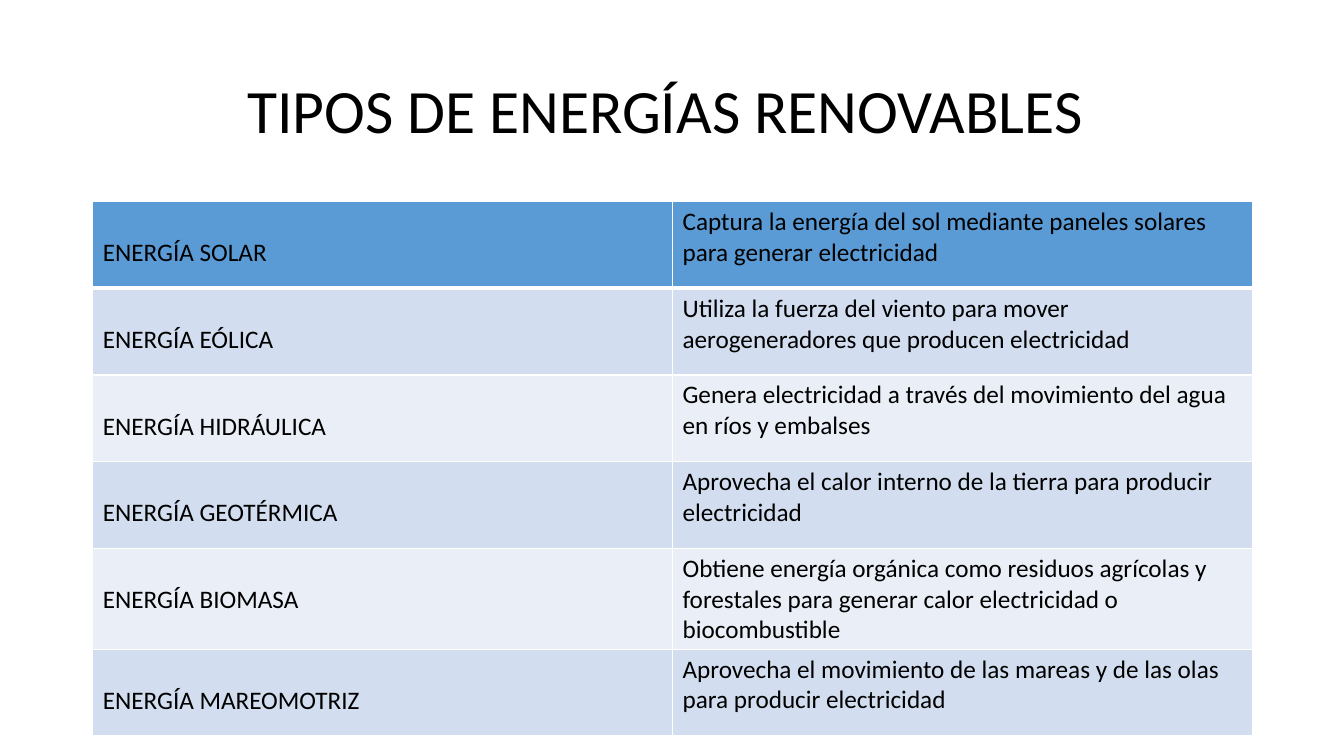
"""Build a slide with a table of renewable energy types."""
import pptx
import pptx.util
import pptx.dml.color
import pptx.enum.text
import pptx.oxml
import pptx.oxml.ns
from pptx.util import Inches

TITLE = "TIPOS DE ENERGÍAS RENOVABLES "
ENERGIES = [
    ("ENERGÍA SOLAR", "Captura la energía del sol mediante paneles solares para generar electricidad"),
    ("ENERGÍA EÓLICA", "Utiliza la fuerza del viento para mover aerogeneradores que producen electricidad"),
    ("ENERGÍA HIDRÁULICA", "Genera electricidad a través del movimiento del agua en ríos y embalses"),
    ("ENERGÍA GEOTÉRMICA", "Aprovecha el calor interno de la tierra para producir electricidad"),
    ("ENERGÍA BIOMASA", "Obtiene energía orgánica como residuos agrícolas y forestales para generar "
                        "calor electricidad o biocombustible"),
    ("ENERGÍA MAREOMOTRIZ", "Aprovecha el movimiento de las mareas y de las olas para producir electricidad"),
]
THEME = {
    "font": "Calibri", "text": "000000", "title_size": 44, "body_size": 18,
    "header": "5B9BD5", "bands": ("EAEFF7", "D2DEEF"),
    "border": "FFFFFF", "thin": 1, "thick": 3,
}
LEFT, WIDTH = 0.92, 11.5
TITLE_TOP, TITLE_HEIGHT = 0.4, 1.45
TABLE_TOP, ROW_HEIGHT = 2, 0.86
LABEL_DROP = 0.36


def style_text(paragraph, size):
    paragraph.font.name = THEME["font"]
    paragraph.font.size = pptx.util.Pt(size)
    paragraph.font.color.rgb = pptx.dml.color.RGBColor.from_string(THEME["text"])


def add_border(cell, side, points):
    cell._tc.get_or_add_tcPr().append(pptx.oxml.parse_xml(
        f'<a:ln{side} {pptx.oxml.ns.nsdecls("a")} w="{pptx.util.Pt(points)}">'
        f'<a:solidFill><a:srgbClr val="{THEME["border"]}"/></a:solidFill></a:ln{side}>'))


def add_title(slide):
    title = slide.shapes.add_textbox(
        Inches(LEFT), Inches(TITLE_TOP), Inches(WIDTH), Inches(TITLE_HEIGHT)).text_frame
    title.word_wrap = True
    title.vertical_anchor = pptx.enum.text.MSO_ANCHOR.MIDDLE
    heading = title.paragraphs[0]
    heading.text = TITLE
    heading.alignment = pptx.enum.text.PP_ALIGN.CENTER
    heading.line_spacing = 0.9
    style_text(heading, THEME["title_size"])


def add_energy_table(slide):
    table = slide.shapes.add_table(
        len(ENERGIES), 2, Inches(LEFT), Inches(TABLE_TOP),
        Inches(WIDTH), Inches(ROW_HEIGHT * len(ENERGIES))).table
    table.first_row = False
    table.horz_banding = False
    for row, energy in enumerate(ENERGIES):
        table.rows[row].height = Inches(ROW_HEIGHT)
        fill = THEME["bands"][row % 2] if row else THEME["header"]
        top = THEME["thick"] if row == 1 else THEME["thin"]
        bottom = THEME["thick"] if row == 0 else THEME["thin"]
        for column, wording in enumerate(energy):
            cell = table.cell(row, column)
            cell.text = wording
            style_text(cell.text_frame.paragraphs[0], THEME["body_size"])
            for side, points in (("L", THEME["thin"]), ("R", THEME["thin"]), ("T", top), ("B", bottom)):
                add_border(cell, side, points)
            cell.fill.solid()
            cell.fill.fore_color.rgb = pptx.dml.color.RGBColor.from_string(fill)
        table.cell(row, 0).margin_top = Inches(LABEL_DROP)


def main():
    deck = pptx.Presentation()
    deck.slide_width, deck.slide_height = Inches(13.33), Inches(7.5)
    slide = deck.slides.add_slide(deck.slide_layouts[6])
    add_title(slide)
    add_energy_table(slide)
    deck.save("out.pptx")


if __name__ == "__main__":
    main()
